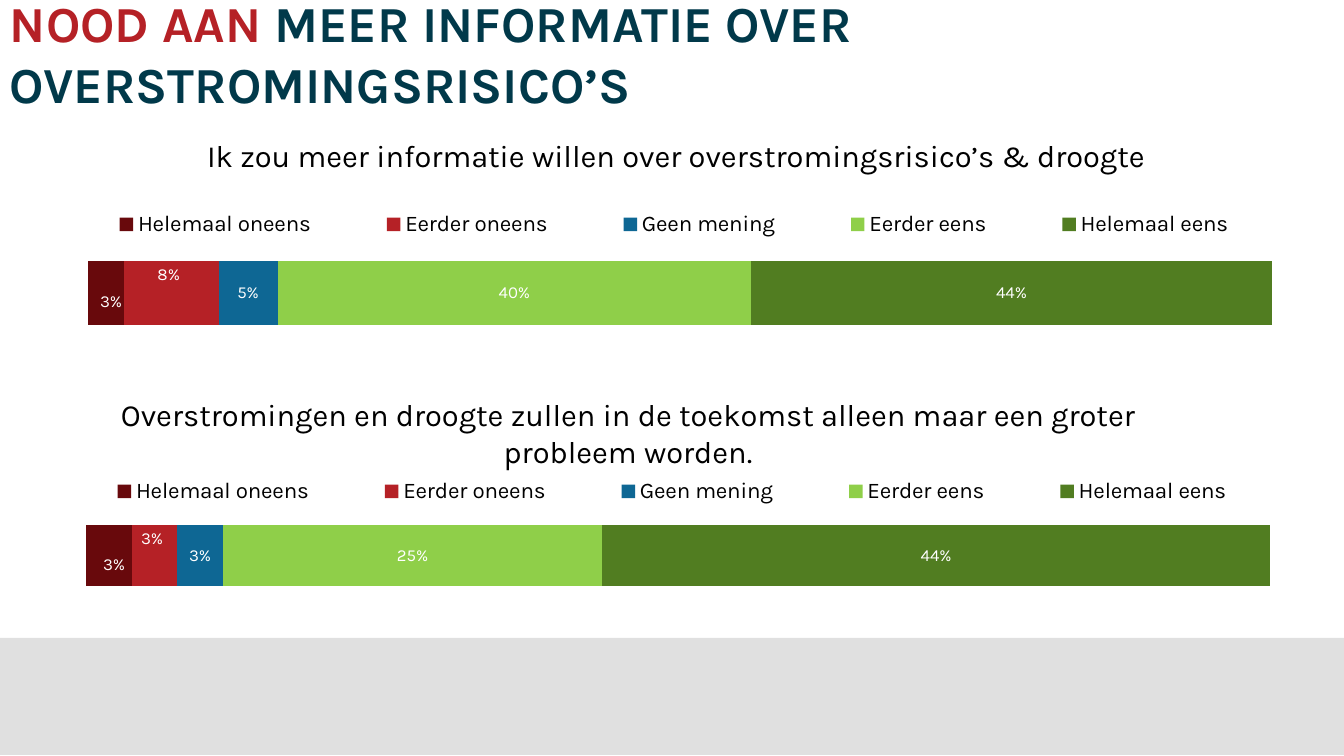
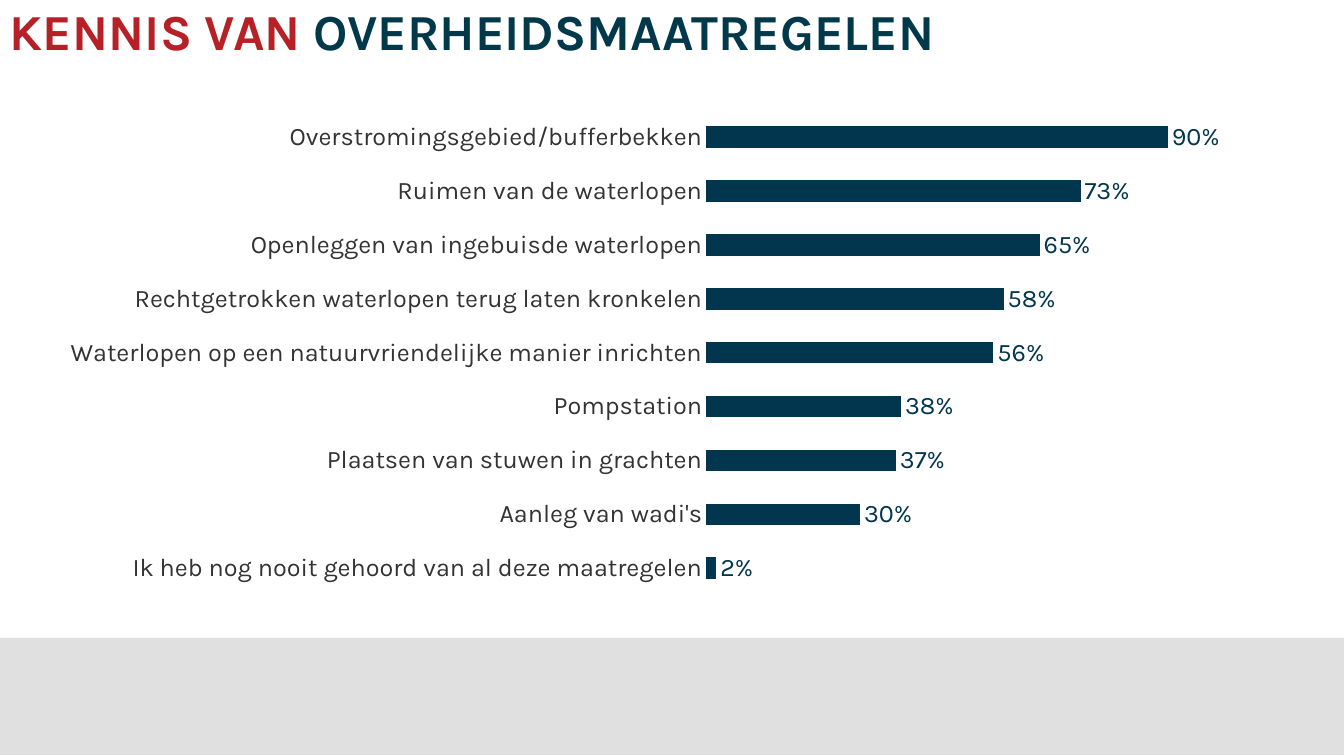
"""Build two slides on flood-risk survey results."""
from lxml import etree
from pptx import Presentation
from pptx.chart.data import CategoryChartData
from pptx.dml.color import RGBColor
from pptx.enum.chart import XL_CHART_TYPE as Kind, XL_LABEL_POSITION as LabelAt
from pptx.enum.chart import XL_LEGEND_POSITION as LegendAt, XL_TICK_MARK as Tick
from pptx.enum.shapes import MSO_SHAPE as Shape
from pptx.enum.text import MSO_ANCHOR as Anchor, PP_ALIGN as Align
from pptx.oxml.ns import qn
from pptx.util import Pt

PX = 9071.43
WIDTH, HEIGHT = 1344, 756
FONT = "Karla"
RED, TEAL, NAVY = "B52126", "01394A", "01364E"
BLACK, WHITE, GREY = "000000", "FFFFFF", "333333"
rgb = RGBColor.from_string


def add_text(slide, box, runs, size, align, bold=False):
    """Add one paragraph of coloured runs in a wrapping text box."""
    frame = slide.shapes.add_textbox(*(round(v * PX) for v in box)).text_frame
    frame.word_wrap = True
    frame.vertical_anchor = Anchor.MIDDLE
    paragraph = frame.paragraphs[0]
    paragraph.alignment = align
    for words, color in runs:
        run = paragraph.add_run()
        run.text = words
        run.font.name, run.font.size, run.font.bold = FONT, Pt(size), bold
        run.font.color.rgb = rgb(color)


def set_layout(parent, index, settings):
    """Give a chart part a manual layout."""
    for old in parent.findall(qn("c:layout")):
        parent.remove(old)
    layout = etree.Element(qn("c:layout"))
    manual = etree.SubElement(layout, qn("c:manualLayout"))
    for tag, value in settings.items():
        etree.SubElement(manual, qn(f"c:{tag}")).set("val", str(value))
    parent.insert(index, layout)


deck = Presentation()
deck.slide_width, deck.slide_height = round(WIDTH * PX), round(HEIGHT * PX)

titles = [
    ((0, 16, WIDTH, 74), "NOOD AAN ", "MEER INFORMATIE OVER OVERSTROMINGSRISICO’S"),
    ((0, 0, WIDTH, 60), "KENNIS VAN ", "OVERHEIDSMAATREGELEN"),
]
for title_box, lead, rest in titles:
    slide = deck.slides.add_slide(deck.slide_layouts[6])
    band = slide.shapes.add_shape(
        Shape.RECTANGLE, *(round(v * PX) for v in (0, 638, WIDTH, 117)))
    band.shadow.inherit = False
    band.line.fill.background()
    band.fill.solid()
    band.fill.fore_color.rgb = rgb(BLACK)
    black = band.fill._xPr.find(f".//{qn('a:srgbClr')}")
    etree.SubElement(black, qn("a:alpha")).set("val", "12000")
    add_text(slide, title_box, [(lead, RED), (rest, TEAL)], 36, Align.LEFT, True)
opinions, measures = deck.slides

questions = [
    ((94, 132, 1164, 47),
     "Ik zou meer informatie willen over overstromingsrisico’s & droogte"),
    ((46, 390, 1164, 85),
     "Overstromingen en droogte zullen in de toekomst alleen maar een groter probleem worden."),
]
for question_box, question in questions:
    add_text(opinions, question_box, [(question, BLACK)], 22, Align.CENTER)

answers = [
    ("Helemaal oneens", "68090C"),
    ("Eerder oneens", RED),
    ("Geen mening", "0E6794"),
    ("Eerder eens", "8FCF49"),
    ("Helemaal eens", "517D21"),
]
label_shifts = [(0.004, 0.05), (-0.002, -0.1)]
known = {
    "Overstromingsgebied/bufferbekken": 0.9,
    "Ruimen van de waterlopen": 0.73,
    "Openleggen van ingebuisde waterlopen": 0.65,
    "Rechtgetrokken waterlopen terug laten kronkelen": 0.58,
    "Waterlopen op een natuurvriendelijke manier inrichten": 0.56,
    "Pompstation": 0.38,
    "Plaatsen van stuwen in grachten": 0.37,
    "Aanleg van wadi's": 0.3,
    "Ik heb nog nooit gehoord van al deze maatregelen": 0.02,
}
stacked_plot = (0.03, 0.03, 0.95, 0.88)
charts = [
    (opinions, (51, 207, 1246, 183), stacked_plot, ["1"], answers,
     [[0.03], [0.08], [0.05], [0.4], [0.44]]),
    (opinions, (49, 475, 1246, 172), stacked_plot, ["1"], answers,
     [[0.03], [0.03], [0.03], [0.25], [0.44]]),
    (measures, (48, 85, 1210, 525), (0.544, 0.048, 0.424, 0.924), list(known),
     [("Series 1", NAVY)], [list(known.values())]),
]
for slide, chart_box, plot_area, categories, series_styles, shares in charts:
    stacked = slide is opinions
    data = CategoryChartData(number_format="0%")
    data.categories = categories
    for (name, _), values in zip(series_styles, shares):
        data.add_series(name, values)
    chart = slide.shapes.add_chart(
        Kind.BAR_STACKED_100 if stacked else Kind.BAR_CLUSTERED,
        *(round(v * PX) for v in chart_box), data).chart
    chart.has_title = False
    chart.font.name, chart.font.size = FONT, Pt(18)
    chart.font.color.rgb = rgb(BLACK)
    edge = {"xMode": "edge", "yMode": "edge"}
    set_layout(chart._chartSpace.chart.plotArea, 0,
               {"layoutTarget": "inner", **edge, **dict(zip("xywh", plot_area))})

    scale = chart.value_axis
    scale.minimum_scale, scale.maximum_scale = 0, 1
    scale.has_major_gridlines = False
    scale.visible = False
    topics = chart.category_axis
    topics.reverse_order = True
    topics.visible = not stacked
    topics.major_tick_mark = Tick.NONE
    topics.format.line.fill.background()
    topics.tick_labels.font.size = Pt(18)
    topics.tick_labels.font.color.rgb = rgb(GREY)

    chart.has_legend = stacked
    if stacked:
        chart.legend.position = LegendAt.TOP
        chart.legend.include_in_layout = False
        chart.legend.font.size = Pt(16)
        set_layout(chart.legend._element, 1,
                   {**edge, "x": 0, "y": 0, "w": 1, "h": 0.19})

    plot = chart.plots[0]
    plot.vary_by_categories = False
    plot.gap_width = 150
    plot.overlap = 100 if stacked else 0
    for series, (_, color) in zip(plot.series, series_styles):
        series.format.fill.solid()
        series.format.fill.fore_color.rgb = rgb(color)
        labels = series.data_labels
        labels.show_value = True
        labels.number_format, labels.number_format_is_linked = "0%", False
        labels.position = LabelAt.CENTER if stacked else LabelAt.OUTSIDE_END
        labels.font.size = Pt(12 if stacked else 18)
        labels.font.color.rgb = rgb(WHITE if stacked else NAVY)
    if stacked:
        for series, (shift_x, shift_y) in zip(plot.series, label_shifts):
            label = series.points[0].data_label
            label.position = LabelAt.CENTER
            label.font.size = Pt(12)
            label.font.color.rgb = rgb(WHITE)
            set_layout(series._element.find(f".//{qn('c:dLbl')}"), 1,
                       {"x": shift_x, "y": shift_y})

deck.save("out.pptx")
